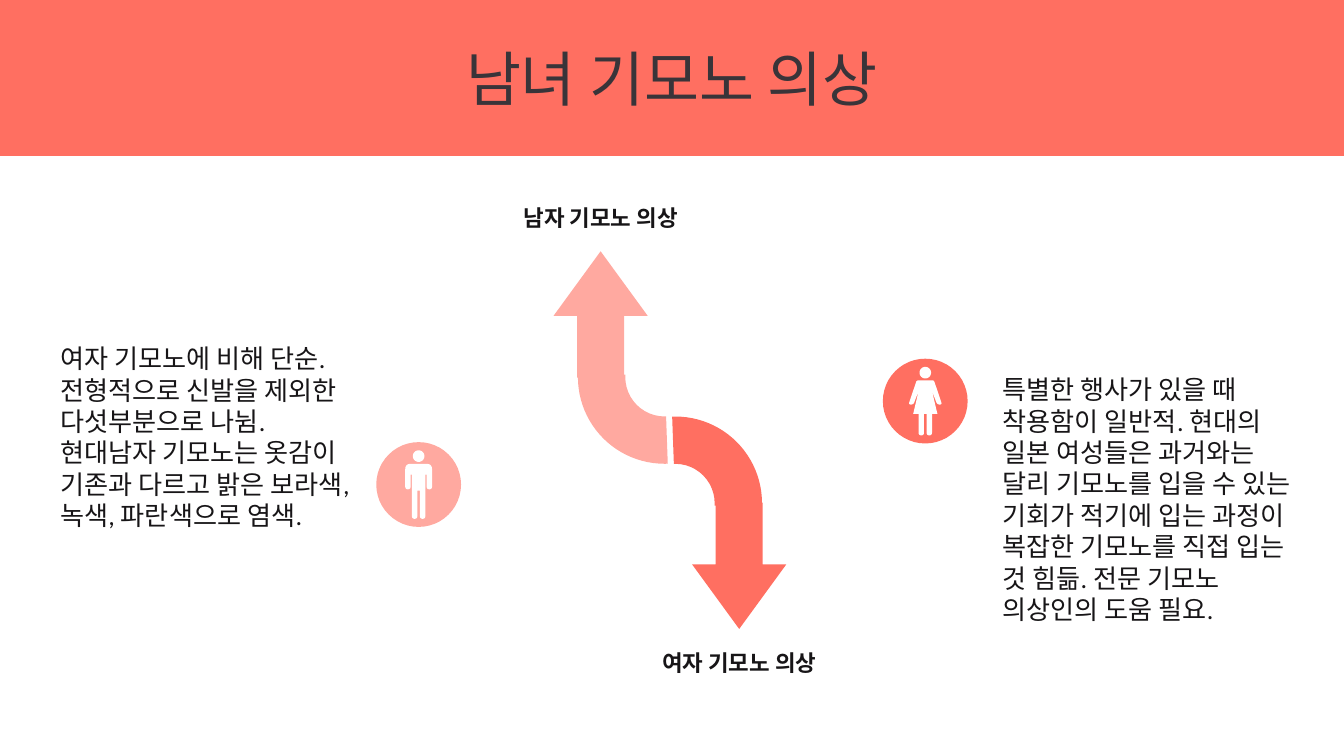
from pptx import Presentation
from pptx.dml.color import RGBColor as RGB
from pptx.enum.shapes import MSO_SHAPE as SHAPE
from pptx.enum.text import MSO_ANCHOR as ANCHOR, MSO_AUTO_SIZE as AUTO, PP_ALIGN as ALIGN
from pptx.util import Pt
from math import cos, sin, tau

THEME = {
    "coral": "FF6F61", "pink": "FFA9A0", "white": "FFFFFF",
    "title": {"size": Pt(32), "name": "Noto Sans CJK KR", "bold": False, "color": "393439"},
    "label": {"size": Pt(12), "name": "Calibri", "bold": True, "color": "171517"},
    "body": {"size": Pt(14), "name": "Calibri", "bold": False, "color": "171517"},
}
W, H, BAND_H = 720, 405, 83.5
TITLE = "남녀 기모노 의상"

# Half outlines, top to bottom: distance from the axis, depth, corner radius
MAN = [(0, 7.2, 0), (7.2, 7.2, 3), (7.2, 20.9, 1.5), (4.3, 20.9, 1.5), (4.3, 13, 0),
       (3.6, 13, 0), (3.6, 36.7, 1.5), (0.7, 36.7, 1.5), (0.7, 21.6, 0)]
WOMAN = [(0, 7.2, 0), (4.6, 7.2, 1), (9, 20.2, 1.3), (6.4, 20.2, 1.3), (3.6, 13, 0),
         (6.5, 25.2, 0), (3.6, 25.2, 0), (3.6, 36.7, 1.5), (0.7, 36.7, 1.5), (0.7, 25.2, 0)]

SIDES = [
    {"label": "남자 기모노 의상", "sign": -1, "fill": "pink", "badge": (224.3, 259.6),
     "figure": MAN, "box": (25.2, 180, 167.8, 143.3),
     "text": ["여자 기모노에 비해 단순. 전형적으로 신발을 제외한 다섯부분으로 나뉨.",
              "현대남자 기모노는 옷감이 기존과 다르고 밝은 보라색,녹색, 파란색으로 염색."]},
    {"label": "여자 기모노 의상", "sign": 1, "fill": "coral", "badge": (495.7, 214.9),
     "figure": WOMAN, "box": (529.9, 196.6, 175.7, 159.8),
     "text": ["특별한 행사가 있을 때 착용함이 일반적. 현대의 일본 여성들은 과거와는 달리 "
              "기모노를 입을 수 있는 기회가 적기에 입는 과정이 복잡한 기모노를 직접 입는 것 "
              "힘듦. 전문 기모노 의상인의 도움 필요."]},
]
CENTER = (358.9, 235.8)
ARROW = {"offset": (37.1, 67.3), "size": (50.4, 67.7), "adj": (0.5, 0.686)}
ARC = {"offset": (2.9, 33.8), "size": (92.9, 92.9), "adj": (160.743, 2.096, 0.273)}
LABEL = {"offset": (37.1, 119.2), "size": (123.8, 21.6)}
BADGE, FIGURE_H, HEAD_R = 45.4, 36.7, 3.1


def centered(cx, cy, w, h):
    return cx - w / 2, cy - h / 2, w, h


def placed(part, sign):
    return centered(*(c + sign * d for c, d in zip(CENTER, part["offset"])), *part["size"])


def paint(sp, color):
    sp.fill.solid()
    sp.fill.fore_color.rgb = RGB.from_string(THEME[color])
    sp.line.fill.background()


def add_shape(kind, box, color, adj=(), rotation=0):
    sp = shapes.add_shape(kind, *map(Pt, box))
    sp.shadow.inherit = False
    paint(sp, color)
    for i, value in enumerate(adj):
        sp.adjustments[i] = value
    sp.rotation = rotation


def write(sp, lines, style, align, **frame):
    tf = sp.text_frame
    for key, value in {"word_wrap": True, **frame}.items():
        setattr(tf, key, value)
    for i, line in enumerate(lines):
        p = tf.add_paragraph() if i else tf.paragraphs[0]
        p.alignment = align
        r = p.add_run()
        r.text = line
        for key, value in THEME[style].items():
            if key == "color":
                r.font.color.rgb = RGB.from_string(value)
            else:
                setattr(r.font, key, value)


def add_text(box, lines, style, align, anchor):
    write(shapes.add_textbox(*map(Pt, box)), lines, style, align,
          vertical_anchor=anchor, auto_size=AUTO.SHAPE_TO_FIT_TEXT)


def toward(a, b, dist):
    length = ((b[0] - a[0]) ** 2 + (b[1] - a[1]) ** 2) ** 0.5
    t = min(dist / length, 0.5)
    return a[0] + (b[0] - a[0]) * t, a[1] + (b[1] - a[1]) * t


def rounded(half):
    points = [half[0][:2]]
    for before, (x, y, radius), after in zip(half, half[1:], half[2:]):
        if not radius:
            points.append((x, y))
            continue
        a, b = toward((x, y), before, radius), toward((x, y), after, radius)
        for t in (0, 0.25, 0.5, 0.75, 1):
            k = (1 - t) ** 2, 2 * t * (1 - t), t ** 2
            points.append(tuple(k[0] * m + k[1] * n + k[2] * q for m, n, q in zip(a, (x, y), b)))
    return points + [half[-1][:2]]


def add_figure(cx, cy, half):
    right = rounded(half)
    body = right + [(-x, y) for x, y in reversed(right[1:])]
    head = [(HEAD_R * cos(tau * i / 32), HEAD_R * (1 + sin(tau * i / 32))) for i in range(32)]
    top = cy - FIGURE_H / 2
    body, head = ([(Pt(cx + x), Pt(top + y)) for x, y in part] for part in (body, head))
    fb = shapes.build_freeform(*body[0])
    fb.add_line_segments(body[1:])
    fb.move_to(*head[0])
    fb.add_line_segments(head[1:])
    sp = fb.convert_to_shape()
    sp.shadow.inherit = False
    paint(sp, "white")


prs = Presentation()
prs.slide_width, prs.slide_height = Pt(W), Pt(H)
s = prs.slides.add_slide(prs.slide_layouts[5])
shapes = s.shapes

title = shapes.title
title.left, title.top, title.width, title.height = map(Pt, (0, 0, W, BAND_H))
paint(title, "coral")
write(title, [TITLE], "title", ALIGN.CENTER, vertical_anchor=ANCHOR.MIDDLE, auto_size=AUTO.NONE)

for side in SIDES:
    sign, fill = side["sign"], side["fill"]
    add_shape(SHAPE.UP_ARROW, placed(ARROW, sign), fill, ARROW["adj"], 90 + 90 * sign)
    add_shape(SHAPE.BLOCK_ARC, placed(ARC, sign), fill, ARC["adj"], 90 - 90 * sign)
    add_text(placed(LABEL, sign), [side["label"]], "label", ALIGN.CENTER, ANCHOR.MIDDLE)
    add_shape(SHAPE.OVAL, centered(*side["badge"], BADGE, BADGE), fill)
    add_figure(*side["badge"], side["figure"])
    add_text(side["box"], side["text"], "body", ALIGN.LEFT, ANCHOR.TOP)

prs.save("out.pptx")
